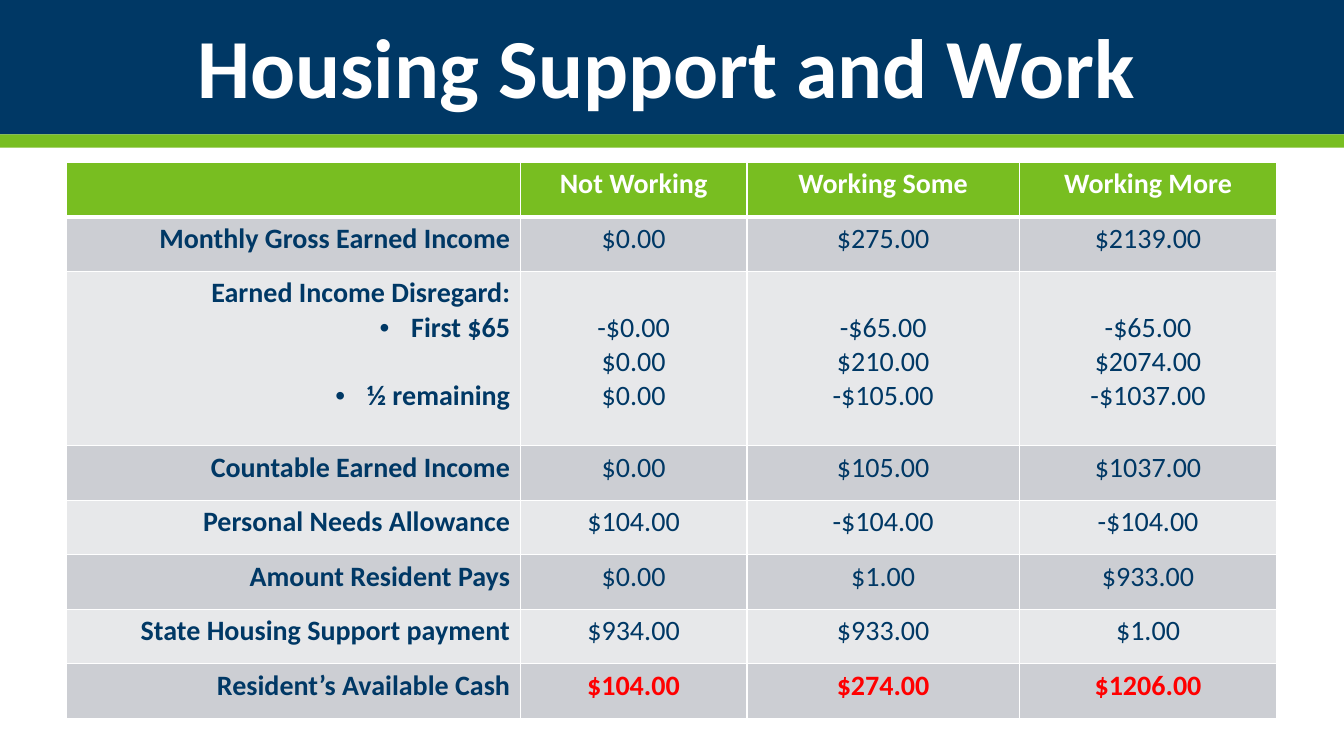
"""Builds the Housing Support and Work slide with its income comparison table."""
from lxml import etree
from pptx import Presentation
from pptx.dml.color import RGBColor
from pptx.enum.shapes import MSO_SHAPE
from pptx.enum.text import MSO_AUTO_SIZE, PP_ALIGN
from pptx.oxml.ns import qn
from pptx.util import Pt

RECT = MSO_SHAPE.RECTANGLE
LEFT, CENTER, RIGHT = PP_ALIGN.LEFT, PP_ALIGN.CENTER, PP_ALIGN.RIGHT
COLORS = {"navy": "003865", "green": "78BE21", "white": "FFFFFF",
          "dark": "CCCED3", "light": "E7E8EA", "red": "FF0000"}
LINE = 24.4
BULLET_INDENT = 22.5


def add_text(tf, text, size=20, color="navy", bold=False, align=CENTER,
             bullet=False, before=0):
    """Write text as the next paragraph of a text frame."""
    p = tf.add_paragraph() if tf.text else tf.paragraphs[0]
    p.alignment = align
    if before:
        p.space_before = Pt(before)
    if bullet:
        pPr = p._p.get_or_add_pPr()
        pPr.set("marL", str(Pt(BULLET_INDENT)))
        pPr.set("indent", str(Pt(-BULLET_INDENT)))
        etree.SubElement(pPr, qn("a:buFont"), typeface="Arial")
        etree.SubElement(pPr, qn("a:buChar"), char="•")
    r = p.add_run()
    r.text = text
    r.font.name = "Calibri"
    r.font.size = Pt(size)
    r.font.bold = bold
    r.font.color.rgb = RGBColor.from_string(COLORS[color])


def style_cell(cell, fill, top, bottom):
    """Give a cell white borders and a solid fill."""
    tcPr = cell._tc.get_or_add_tcPr()
    for side, width in (("L", 1), ("R", 1), ("T", top), ("B", bottom)):
        ln = etree.SubElement(tcPr, qn(f"a:ln{side}"), w=str(Pt(width)))
        solid = etree.SubElement(ln, qn("a:solidFill"))
        etree.SubElement(solid, qn("a:srgbClr"), val=COLORS["white"])
    cell.fill.solid()
    cell.fill.fore_color.rgb = RGBColor.from_string(COLORS[fill])


prs = Presentation()
prs.slide_width, prs.slide_height = Pt(960), Pt(540)
s = prs.slides.add_slide(prs.slide_layouts[6])

for top, height, color in ((0, 96, "navy"), (96, 9.4, "green")):
    sp = s.shapes.add_shape(RECT, 0, Pt(top), Pt(960), Pt(height))
    sp.shadow.inherit = False
    sp.fill.solid()
    sp.fill.fore_color.rgb = RGBColor.from_string(COLORS[color])
    sp.line.fill.background()

rows = [
    ("", "Not Working", "Working Some", "Working More"),
    ("Monthly Gross Earned Income", "$0.00", "$275.00", "$2139.00"),
    ("Earned Income Disregard:", ("-$0.00", "$0.00", "$0.00"),
     ("-$65.00", "$210.00", "-$105.00"), ("-$65.00", "$2074.00", "-$1037.00")),
    ("Countable Earned Income", "$0.00", "$105.00", "$1037.00"),
    ("Personal Needs Allowance", "$104.00", "-$104.00", "-$104.00"),
    ("Amount Resident Pays", "$0.00", "$1.00", "$933.00"),
    ("State Housing Support payment", "$934.00", "$933.00", "$1.00"),
    ("Resident’s Available Cash", "$104.00", "$274.00", "$1206.00"),
]
disregard_row, cash_row = 2, len(rows) - 1
col_widths = (324, 162, 194.5, 184)
row_heights = [124.5 if i == disregard_row else 39 for i in range(len(rows))]

table = s.shapes.add_table(len(rows), len(col_widths), Pt(47.6), Pt(115.8),
                           Pt(sum(col_widths)), Pt(sum(row_heights))).table
table.first_row = table.horz_banding = False
for column, width in zip(table.columns, col_widths):
    column.width = Pt(width)

for i, values in enumerate(rows):
    table.rows[i].height = Pt(row_heights[i])
    fill = "green" if i == 0 else "dark" if i % 2 else "light"
    color = {0: "white", cash_row: "red"}.get(i, "navy")
    for j, value in enumerate(values):
        cell = table.cell(i, j)
        style_cell(cell, fill, 3 if i == 1 else 1, 3 if i == 0 else 1)
        tf = cell.text_frame
        if j == 0:
            if value:
                add_text(tf, value, bold=True, align=RIGHT)
            continue
        if i == disregard_row:
            cell.margin_top = Pt(3.6 + LINE)
        for text in value if i == disregard_row else (value,):
            add_text(tf, text, color=color, bold=i in (0, cash_row))

tf = table.cell(disregard_row, 0).text_frame
for text, before in (("First $65", 0), ("½ remaining", LINE)):
    add_text(tf, text, bold=True, align=RIGHT, bullet=True, before=before)

tf = s.shapes.add_textbox(Pt(134), Pt(6.5), Pt(692), Pt(80)).text_frame
tf.word_wrap = False
tf.auto_size = MSO_AUTO_SIZE.SHAPE_TO_FIT_TEXT
add_text(tf, "Housing Support and Work", size=60, color="white", bold=True,
         align=LEFT)

prs.save("out.pptx")
